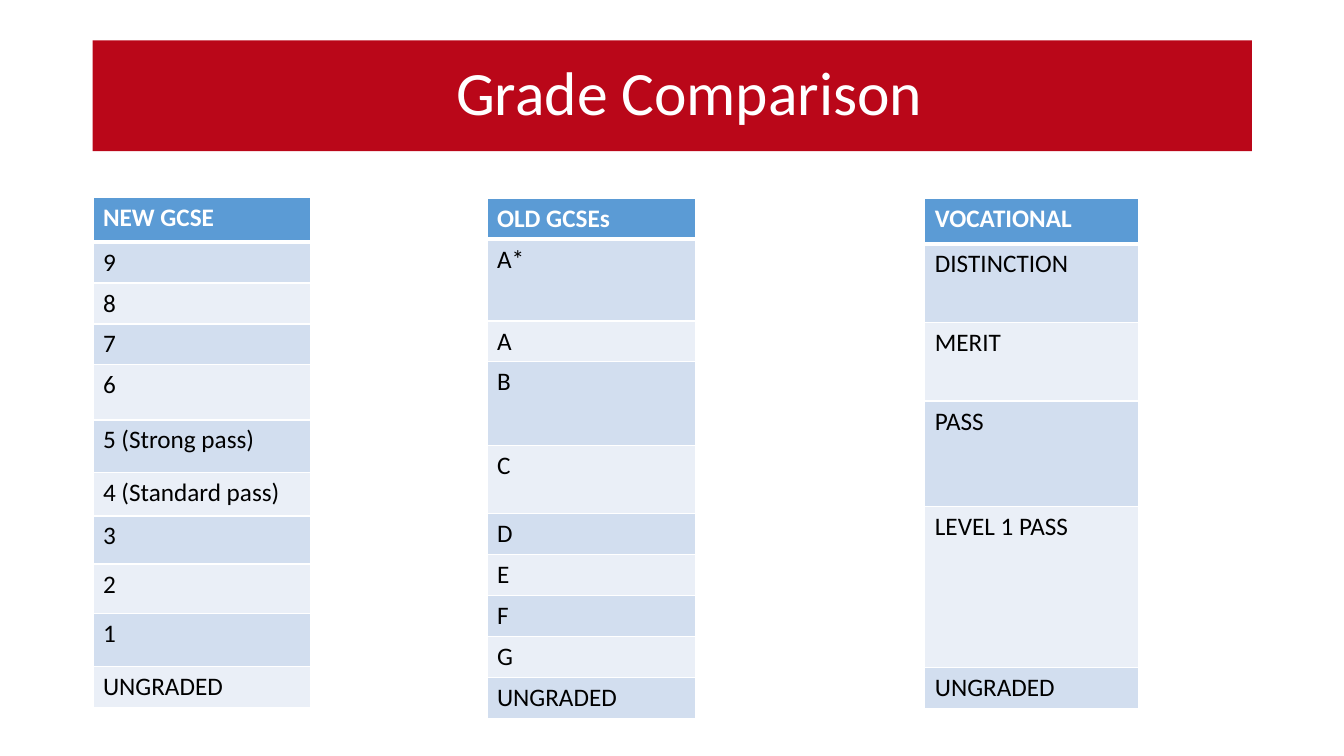
from collections import namedtuple

from lxml import etree
from pptx import Presentation
from pptx.dml.color import RGBColor
from pptx.enum.text import MSO_ANCHOR, PP_ALIGN
from pptx.oxml.ns import qn
from pptx.util import Pt

CENTER = PP_ALIGN.CENTER
LEFT = PP_ALIGN.LEFT
MIDDLE = MSO_ANCHOR.MIDDLE
TITLE_ONLY = 5

FONT = "Calibri"
RED, BLUE, WHITE, BLACK = "BA0719", "5B9BD5", "FFFFFF", "000000"
BANDS = ("EAEFF7", "D2DEEF")
HEADER_RULE, THIN_RULE = 3, 1

Box = namedtuple("Box", "left top width height")

GRADE_TABLES = [
    (Box(66.4, 141.3, 155.5, 363), [
        ("NEW GCSE", 31.7), ("9", 29.2), ("8", 29.2), ("7", 29.2), ("6", 39.4),
        ("5 (Strong pass)", 37.6), ("4 (Standard pass)", 31), ("3", 34.4),
        ("2", 35.6), ("1", 37.6), ("UNGRADED", 29.2)]),
    (Box(347.8, 141.7, 149, 369), [
        ("OLD GCSEs", 29.2), ("A*", 58.4), ("A", 29.2), ("B", 59.5), ("C", 49),
        ("D", 29.2), ("E", 29.2), ("F", 29.2), ("G", 29.2), ("UNGRADED", 29.2)]),
    (Box(660.6, 141.7, 153, 364), [
        ("VOCATIONAL", 32.4), ("DISTINCTION", 56.2), ("MERIT", 56.2),
        ("PASS", 75.6), ("LEVEL 1 PASS", 114.6), ("UNGRADED", 29.2)]),
]


def color(value):
    """Return the colour for a hex string."""
    return RGBColor.from_string(value)


def write(frame, text, size=18, ink=BLACK, bold=False, align=LEFT, spacing=1.0):
    """Put one formatted paragraph into a text frame."""
    para = frame.paragraphs[0]
    para.alignment = align
    para.line_spacing = spacing
    span = para.add_run()
    span.text = text
    span.font.name = FONT
    span.font.size = Pt(size)
    span.font.bold = bold
    span.font.color.rgb = color(ink)


def add_rule(cell, side, width):
    """Draw a white rule on one side of a cell."""
    properties = cell._tc.get_or_add_tcPr()
    rule = etree.SubElement(properties, qn(f"a:ln{side}"), w=str(Pt(width)))
    fill = etree.SubElement(rule, qn("a:solidFill"))
    etree.SubElement(fill, qn("a:srgbClr"), val=WHITE)


def add_title(slide, box):
    """Format the title placeholder as a red banner."""
    title = slide.shapes.title
    title.left, title.top, title.width, title.height = map(Pt, box)
    title.fill.solid()
    title.fill.fore_color.rgb = color(RED)
    frame = title.text_frame
    frame.word_wrap = True
    frame.vertical_anchor = MIDDLE
    frame.margin_left, frame.margin_right = Pt(32), Pt(7.2)
    write(frame, "Grade Comparison", size=44, ink=WHITE, align=CENTER, spacing=0.9)


def add_grades(slide, box, grades):
    """Add a one-column banded table with a header row."""
    table = slide.shapes.add_table(len(grades), 1, *map(Pt, box)).table
    table.columns[0].width = Pt(box.width)
    for index, (label, height) in enumerate(grades):
        table.rows[index].height = Pt(height)
        cell = table.cell(index, 0)
        header = index == 0
        add_rule(cell, "L", THIN_RULE)
        add_rule(cell, "R", THIN_RULE)
        add_rule(cell, "T", HEADER_RULE if index == 1 else THIN_RULE)
        add_rule(cell, "B", HEADER_RULE if header else THIN_RULE)
        cell.fill.solid()
        cell.fill.fore_color.rgb = color(BLUE if header else BANDS[index % 2])
        write(cell.text_frame, label, ink=WHITE if header else BLACK, bold=header)


def main():
    """Build and save the grade comparison slide."""
    deck = Presentation()
    deck.slide_width, deck.slide_height = Pt(960), Pt(540)
    slide = deck.slides.add_slide(deck.slide_layouts[TITLE_ONLY])
    add_title(slide, Box(66.2, 28.8, 828, 79.2))
    for box, grades in GRADE_TABLES:
        add_grades(slide, box, grades)
    deck.save("out.pptx")


if __name__ == "__main__":
    main()
